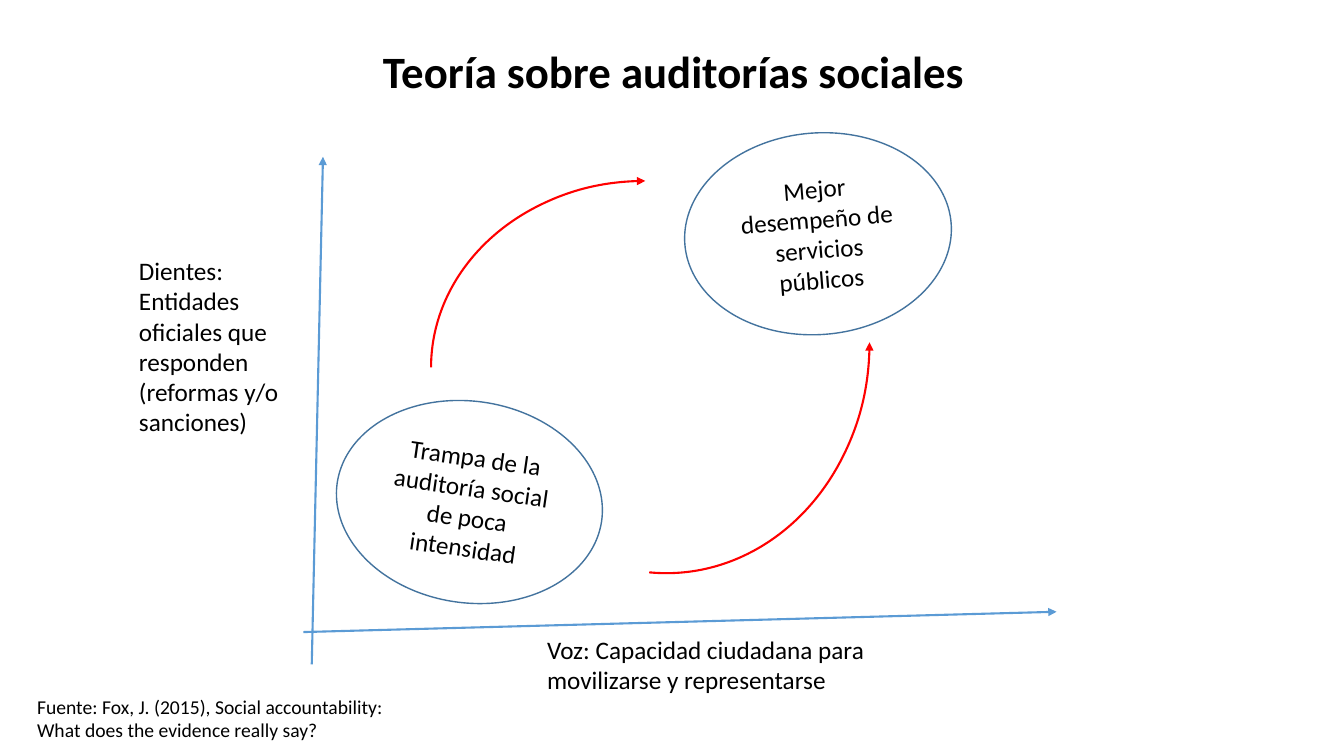
from lxml import etree
from pptx import Presentation
from pptx import util as u
from pptx.dml.color import RGBColor
from pptx.enum import shapes, text
from pptx.oxml.ns import qn


def tint(code):
    """Turn a hex string into a colour."""
    return RGBColor.from_string(code)


def style(par, size, bold=False):
    """Set the font of one paragraph."""
    font = par.font
    font.name, font.size, font.bold = "Calibri", u.Pt(size), bold
    font.color.rgb = tint("000000")


def arrow(item, end):
    """Put a triangle on one end of a line."""
    etree.SubElement(item.line._get_or_add_ln(), qn("a:" + end), type="triangle")


def label(slide, box, lines, size, bold=False, align=text.PP_ALIGN.LEFT):
    """Place a wrapped text box."""
    frame = slide.shapes.add_textbox(*map(u.Pt, box)).text_frame
    frame.word_wrap = True
    frame.auto_size = text.MSO_AUTO_SIZE.SHAPE_TO_FIT_TEXT
    frame.text = "\n".join(lines)
    for par in frame.paragraphs:
        par.alignment = align
        style(par, size, bold)


def axis(slide, start, end):
    """Draw an axis with an arrow at its end."""
    line = slide.shapes.add_connector(
        shapes.MSO_CONNECTOR.STRAIGHT, *map(u.Pt, start + end))
    line.line.color.rgb = tint("5B9BD5")
    line.line.width = u.Pt(1.5)
    arrow(line, "tailEnd")
    etree.SubElement(line._element.spPr, qn("a:effectLst"))


def outline(slide, kind, box, turn, color, width):
    """Draw a turned shape without fill."""
    item = slide.shapes.add_shape(kind, *map(u.Pt, box))
    item.rotation = turn
    item.shadow.inherit = False
    item.fill.background()
    item.line.color.rgb = tint(color)
    item.line.width = u.Pt(width)
    return item


def bubble(slide, box, turn, words):
    """Draw an ellipse that holds centred text."""
    item = outline(slide, shapes.MSO_SHAPE.OVAL, box, turn, "43739E", 1)
    frame = item.text_frame
    frame.word_wrap = True
    frame.vertical_anchor = text.MSO_ANCHOR.MIDDLE
    frame.text = words
    par = frame.paragraphs[0]
    par.alignment = text.PP_ALIGN.CENTER
    style(par, 18)


def curve(slide, box, turn, end, sweep=()):
    """Draw a red arc with an arrow at one end."""
    item = outline(slide, shapes.MSO_SHAPE.ARC, box, turn, "FF0000", 1.5)
    for spot, value in enumerate(sweep):
        item.adjustments[spot] = value
    arrow(item, end)


def chart(slide, left, top, wide, high):
    """Draw the axes, their labels, the two states and the paths between."""
    axis(slide, (left, top + high - 23), (left + wide, top + high - 37.5))
    axis(slide, (left + 6, top + high), (left + 14, top + 17))
    label(slide, (left - 124.5, top + 84, 126.7, 138),
          ["Dientes:", "Entidades oficiales que responden (reformas y/o sanciones)"], 18)
    label(slide, (left + 167, top + 354.3, 247, 51),
          ["Voz: Capacidad ciudadana para movilizarse y representarse"], 18)
    size = (190.8, 144)
    bubble(slide, (left + 23.2, top + 191.6) + size, 8.2,
           "Trampa de la auditoría social de poca intensidad")
    bubble(slide, (left + 272.2, top) + size, 355.4,
           "Mejor desempeño de servicios públicos")
    curve(slide, (left + 111, top + 14.4, 266.4, 306), 270, "tailEnd")
    curve(slide, (left + 94.4, top + 4.4, 329.8, 290.2), 90, "headEnd", (162, 2.56))


def main():
    """Build and save the slide."""
    deck = Presentation()
    deck.slide_width, deck.slide_height = u.Pt(960), u.Pt(540)
    slide = deck.slides.add_slide(deck.slide_layouts[6])
    label(slide, (208.8, 27.4, 545, 46), ["Teoría sobre auditorías sociales"],
          32, True, text.PP_ALIGN.CENTER)
    chart(slide, 216.7, 95, 538, 379.5)
    label(slide, (19.4, 492.5, 269.3, 41),
          ["Fuente: Fox, J. (2015), Social accountability: "
           "What does the evidence really say?"], 14)
    deck.save("out.pptx")


if __name__ == "__main__":
    main()
